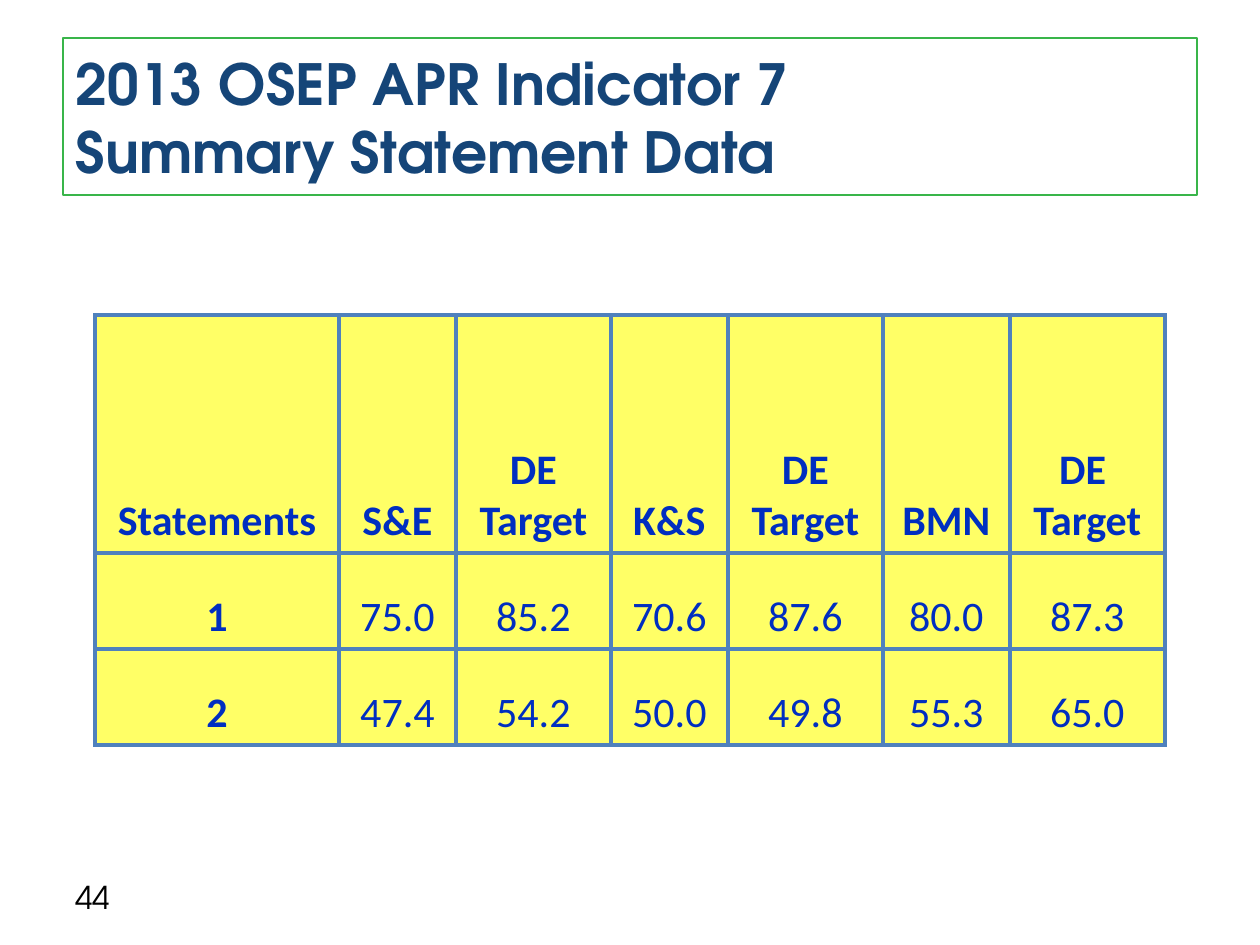
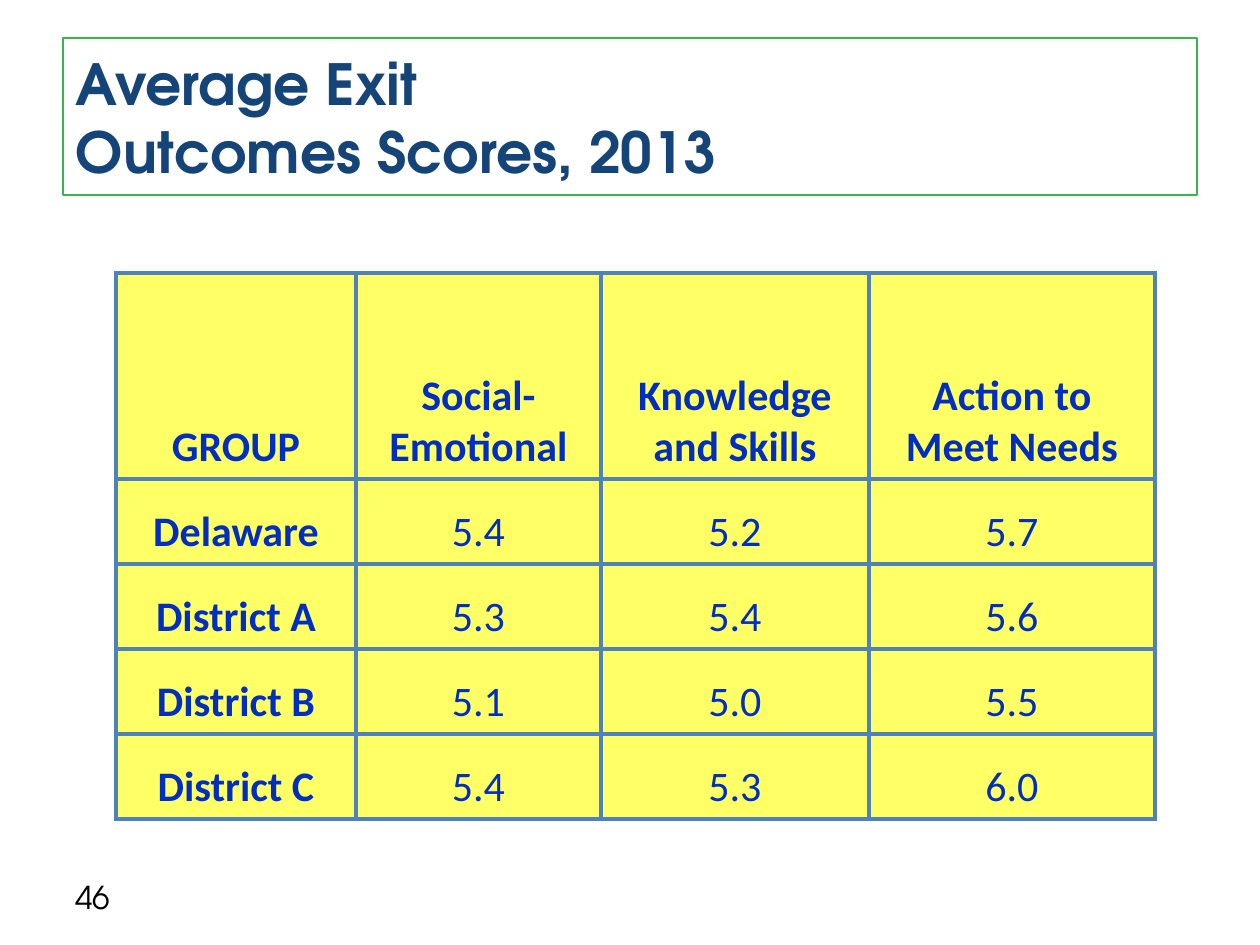
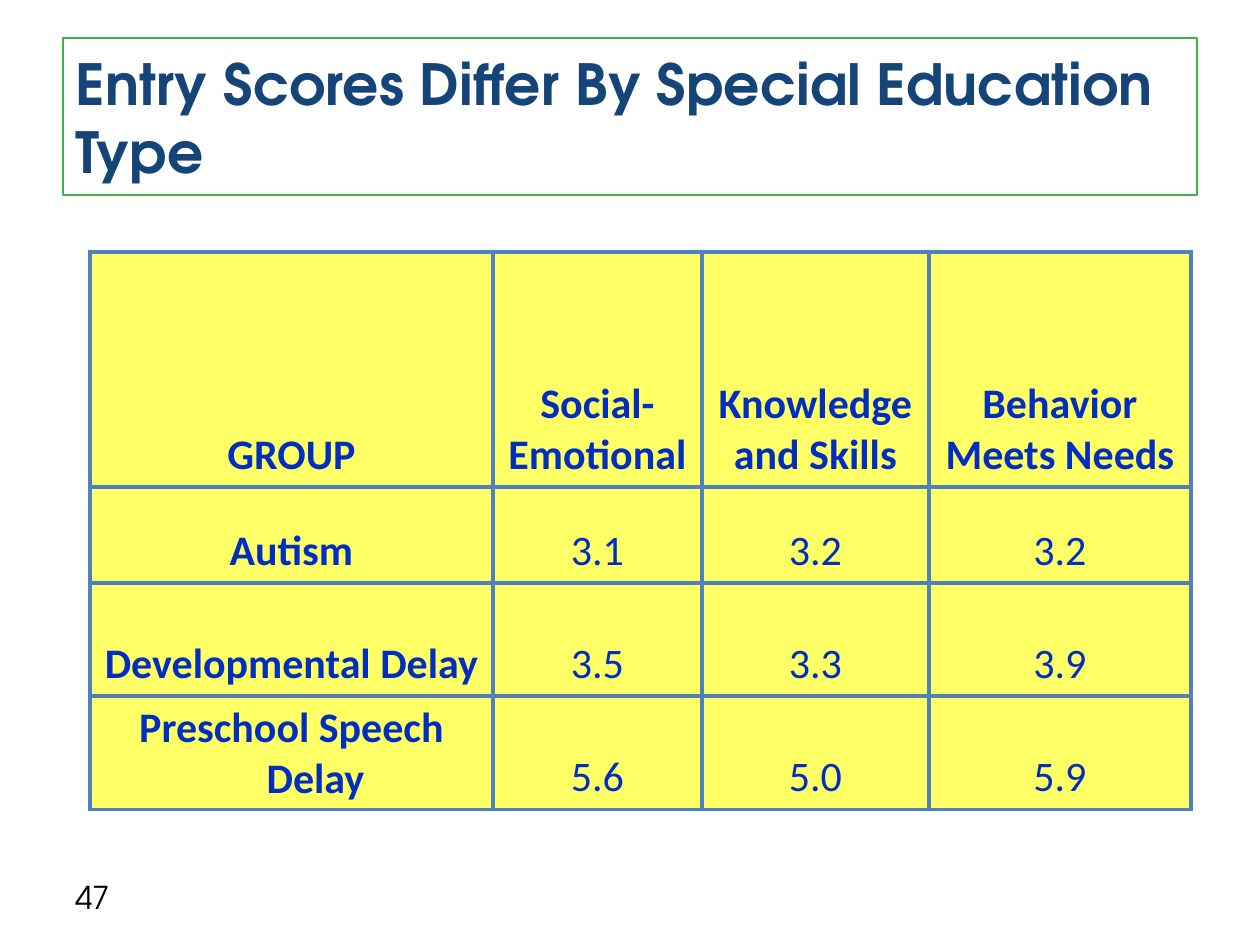
"""Build three slides of outcome tables under framed titles."""
from lxml import etree
from pptx import Presentation
from pptx import util as u
from pptx.dml import color
from pptx.enum import text
from pptx.oxml import ns

PX = 914400 / 126
WIDTH, HEIGHT = 1260, 945
HANG = 48
HEAD, BODY = "TeX Gyre Adventor", "Calibri"
COLORS = {
    "title": "154578",
    "frame": "39B54A",
    "page": "000000",
    "ink": "002EC0",
    "cell": "FFFF66",
    "grid": "4F81BD",
}


def px(n):
    """Turn px into EMU."""
    return u.Emu(round(n * PX))


def rgb(name):
    """Look up a named colour."""
    return color.RGBColor.from_string(COLORS[name])


def place(shape, left, top, width, height):
    """Move and size a shape."""
    shape.left, shape.top = px(left), px(top)
    shape.width, shape.height = px(width), px(height)


def style(para, face, size, ink, bold=False):
    """Format all runs of a paragraph."""
    for run in para.runs:
        font = run.font
        font.name, font.size, font.bold = face, u.Pt(size), bold
        font.color.rgb = rgb(ink)


def add_title(slide, words):
    """Fill the title placeholder and frame it."""
    title = slide.shapes.title
    place(title, 63, 38, 1134, 157)
    title.line.color.rgb = rgb("frame")
    title.line.width = u.Pt(1)
    frame = title.text_frame
    frame.text = words
    frame.word_wrap = True
    frame.auto_size = text.MSO_AUTO_SIZE.NONE
    frame.vertical_anchor = text.MSO_ANCHOR.MIDDLE
    para = frame.paragraphs[0]
    para.alignment = text.PP_ALIGN.LEFT
    style(para, HEAD, 32.4, "title", True)


def add_page(slide, number):
    """Write the page number at the lower left."""
    box = slide.shapes.add_textbox(px(63), px(872), px(294), px(50))
    frame = box.text_frame
    frame.text = str(number)
    frame.word_wrap = True
    frame.vertical_anchor = text.MSO_ANCHOR.MIDDLE
    style(frame.paragraphs[0], HEAD, 18, "page")


def add_grid(cell):
    """Draw the four borders of a cell."""
    props = cell._tc.get_or_add_tcPr()
    for side in ("a:lnL", "a:lnR", "a:lnT", "a:lnB"):
        line = etree.SubElement(props, ns.qn(side), w=str(u.Pt(2.25)))
        fill = etree.SubElement(line, ns.qn("a:solidFill"))
        etree.SubElement(fill, ns.qn("a:srgbClr"), val=COLORS["grid"])


def fill_cell(cell, words, bold, hang):
    """Write and format one table cell."""
    cell.text_frame.text = words
    cell.vertical_anchor = text.MSO_ANCHOR.BOTTOM
    add_grid(cell)
    cell.fill.solid()
    cell.fill.fore_color.rgb = rgb("cell")
    for para in cell.text_frame.paragraphs:
        para.alignment = text.PP_ALIGN.CENTER
        style(para, BODY, 24, "ink", bold)
        if hang:
            props = para._p.get_or_add_pPr()
            props.set("marL", str(px(HANG)))
            props.set("indent", str(px(-HANG)))


def add_table(slide, left, top, cols, rows, data):
    """Add a table with bold first row and column."""
    frame = slide.shapes.add_table(len(rows), len(cols), px(left), px(top),
                                   px(sum(cols)), px(sum(rows)))
    table = frame.table
    table.first_row = table.horz_banding = False
    for col, width in zip(table.columns, cols):
        col.width = px(width)
    for row, height in zip(table.rows, rows):
        row.height = px(height)
    for r, line in enumerate(data):
        for c, words in enumerate(line):
            hang = r > 0 or c != 1 and words != "DE Target"
            fill_cell(table.cell(r, c), words, r == 0 or c == 0, hang)


def add_slide(prs, title, page, *table):
    """Add a slide with title, page number and table."""
    slide = prs.slides.add_slide(prs.slide_layouts[5])
    add_title(slide, title)
    add_page(slide, page)
    add_table(slide, *table)


def main():
    """Build and save the slides."""
    prs = Presentation()
    prs.slide_width, prs.slide_height = px(WIDTH), px(HEIGHT)
    add_slide(
        prs, "2013 OSEP APR Indicator 7\vSummary Statement Data", 44, 95, 315,
        [244, 117, 155, 117, 155, 127, 155], [238, 96, 96],
        [["Statements", "S&E", "DE Target", "K&S", "DE\nTarget", "BMN",
          "DE \nTarget"],
         ["1", "75.0", "85.2", "70.6", "87.6", "80.0", "87.3"],
         ["2", "47.4", "54.2", "50.0", "49.8", "55.3", "65.0"]])
    add_slide(
        prs, "Average Exit\vOutcomes Scores, 2013", 46, 116, 273,
        [240, 245, 268, 286], [206] + [85] * 4,
        [["GROUP", "Social-Emotional", "Knowledge\nand Skills",
          "Action to\nMeet Needs"],
         ["Delaware", "5.4", "5.2", "5.7"],
         ["District A", "5.3", "5.4", "5.6"],
         ["District B", "5.1", "5.0", "5.5"],
         ["District C", "5.4", "5.3", "6.0"]])
    add_slide(
        prs, "Entry Scores Differ By Special Education Type", 47, 90, 252,
        [403, 209, 227, 262], [235, 96, 113, 113],
        [["GROUP", "Social-Emotional", "Knowledge\nand Skills",
          "Behavior\nMeets Needs"],
         ["Autism", "3.1", "3.2", "3.2"],
         ["Developmental Delay", "3.5", "3.3", "3.9"],
         ["Preschool Speech Delay", "5.6", "5.0", "5.9"]])
    prs.save("out.pptx")


if __name__ == "__main__":
    main()
